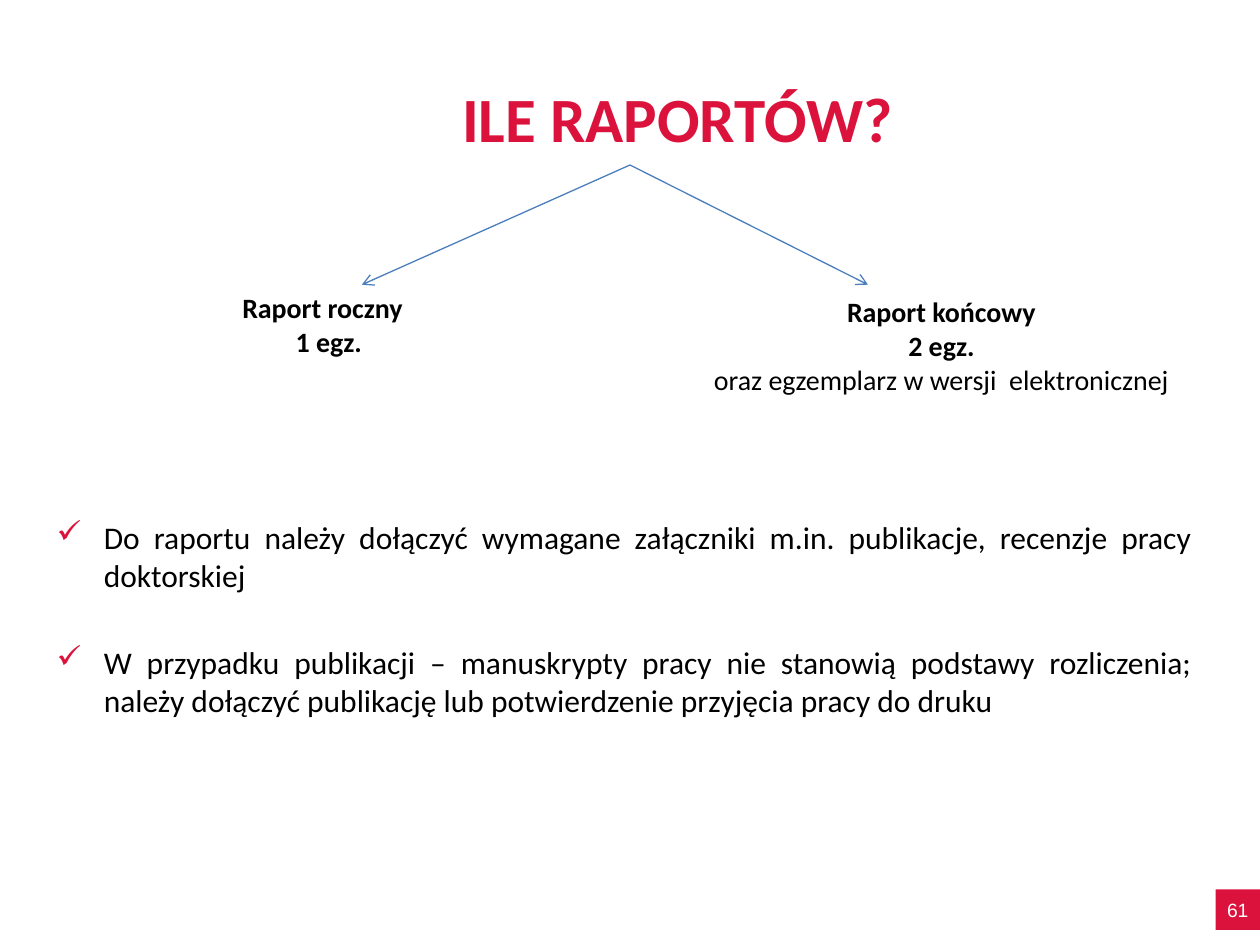
"""Build the slide on how many reports are due."""
import lxml.etree
import pptx
import pptx.dml.color
import pptx.enum.shapes
import pptx.enum.text
import pptx.oxml.ns
import pptx.util

Pt = pptx.util.Pt
Align = pptx.enum.text.PP_ALIGN
Anchor = pptx.enum.text.MSO_ANCHOR
qn = pptx.oxml.ns.qn
COLORS = {"red": "DB133C", "blue": "4B7EBC", "black": "000000", "white": "FFFFFF"}


def rgb(name):
    return pptx.dml.color.RGBColor.from_string(COLORS[name])


def write(shape, lines, color, align=Align.CENTER, anchor=Anchor.TOP, space=0, hanging=0):
    frame = shape.text_frame
    frame.word_wrap = True
    frame.vertical_anchor = anchor
    for index, (text, indent, font) in enumerate(lines):
        paragraph = frame.add_paragraph() if index else frame.paragraphs[0]
        properties = paragraph._p.get_or_add_pPr()
        properties.set("marL", str(Pt(indent)))
        properties.set("indent", str(-Pt(hanging)))
        if hanging:
            bullet_color = lxml.etree.SubElement(properties, qn("a:buClr"))
            lxml.etree.SubElement(bullet_color, qn("a:srgbClr"), val=COLORS["red"])
            lxml.etree.SubElement(properties, qn("a:buChar"), char="✓")
        paragraph.alignment = align
        paragraph.space_before = Pt(space if index else 0)
        run = paragraph.add_run()
        run.text = text
        for name, value in {"name": "Calibri", **font}.items():
            setattr(run.font, name, value)
        run.font.color.rgb = rgb(color)


presentation = pptx.Presentation()
presentation.slide_width, presentation.slide_height = Pt(720), Pt(540)
slide = presentation.slides.add_slide(presentation.slide_layouts[6])
shapes = slide.shapes

heading = {"size": Pt(36), "bold": True}
strong = {"size": Pt(16), "bold": True}
plain = {"size": Pt(16), "bold": False}
body = {"size": Pt(18)}

title = shapes.add_textbox(Pt(242.6), Pt(31.7), Pt(289.4), Pt(60.5))
write(title, [("ILE RAPORTÓW?", 0, heading)], "red", anchor=Anchor.BOTTOM)

requirements = shapes.add_textbox(Pt(25.2), Pt(292.7), Pt(663), Pt(192.6))
write(requirements, [
    ("Do raportu należy dołączyć wymagane załączniki m.in. publikacje, "
     "recenzje pracy doktorskiej", 27, body),
    ("W przypadku publikacji – manuskrypty pracy nie stanowią podstawy rozliczenia; "
     "należy dołączyć publikację lub potwierdzenie przyjęcia pracy do druku", 27, body),
], "black", align=Align.JUSTIFY, space=28, hanging=27)

page_number = shapes.add_shape(
    pptx.enum.shapes.MSO_SHAPE.RECTANGLE, Pt(694.6), Pt(508.2), Pt(25.4), Pt(23.2))
page_number.shadow.inherit = False
page_number.fill.solid()
page_number.fill.fore_color.rgb = rgb("red")
page_number.line.fill.background()
for side in ("left", "top", "right", "bottom"):
    setattr(page_number.text_frame, f"margin_{side}", 0)
write(page_number, [("61", 0, {"name": "Arial", "size": Pt(11)})], "white", anchor=Anchor.MIDDLE)

annual_report = shapes.add_textbox(Pt(54), Pt(162.7), Pt(260.6), Pt(46))
write(annual_report, [("Raport roczny", 0, strong), ("1 egz.", 7.2, strong)], "black")

final_report = shapes.add_textbox(Pt(358), Pt(165), Pt(360), Pt(65.5))
write(final_report, [
    ("Raport końcowy", 0, strong),
    ("2 egz.", 0, strong),
    ("oraz egzemplarz w wersji  elektronicznej", 0, plain),
], "black")

for end in (206.8, 496):
    arrow = shapes.add_connector(
        pptx.enum.shapes.MSO_CONNECTOR.STRAIGHT, Pt(360), Pt(94.3), Pt(end), Pt(162.7))
    arrow.line.color.rgb = rgb("blue")
    arrow.line.width = Pt(0.75)
    lxml.etree.SubElement(arrow.line._get_or_add_ln(), qn("a:tailEnd"), type="arrow")
    lxml.etree.SubElement(arrow._element.spPr, qn("a:effectLst"))

presentation.save("out.pptx")
